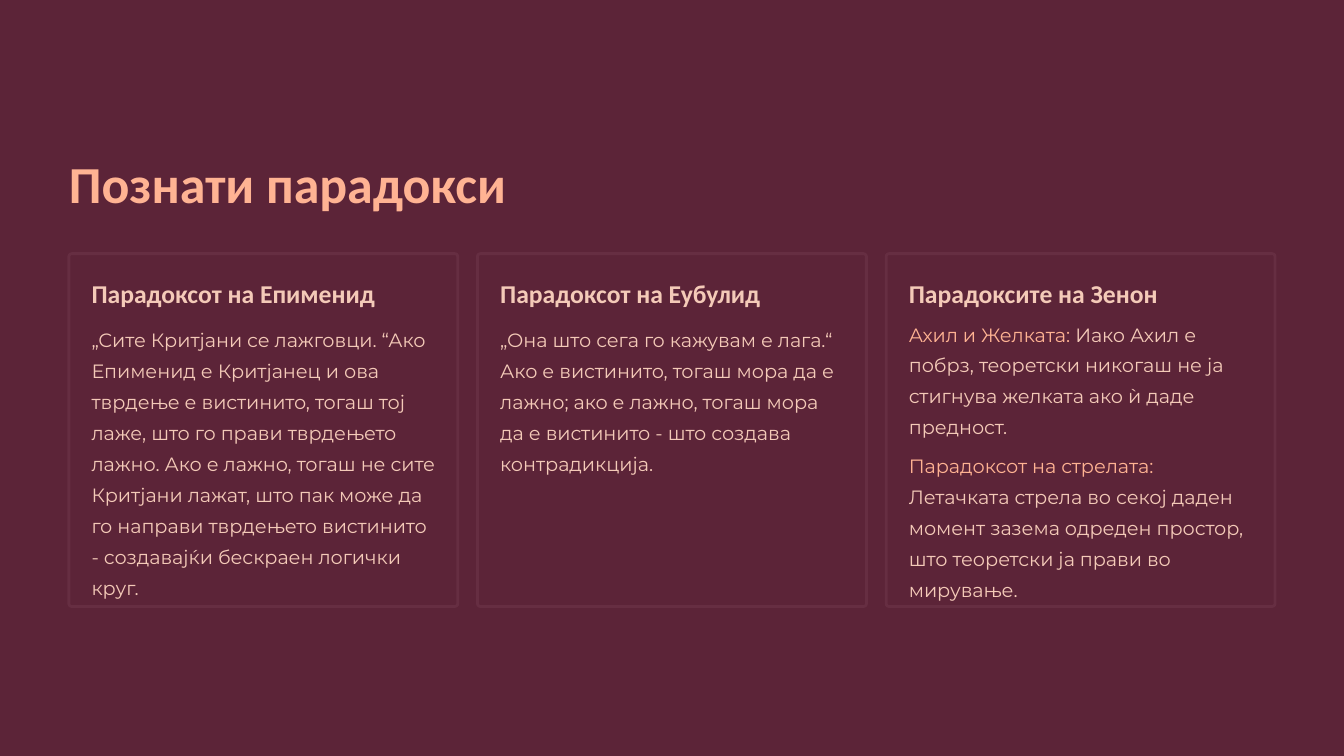
"""Build a slide with three cards about well-known paradoxes."""
from pptx import Presentation
from pptx.dml.color import RGBColor
from pptx.enum.shapes import MSO_SHAPE as Shape
from pptx.enum.text import MSO_ANCHOR as Anchor, MSO_AUTO_SIZE as AutoSize, PP_ALIGN as Align
from pptx.util import Inches, Pt

TITLE = "Познати парадокси"
CARDS = [
    ("Парадоксот на Епименид", 3.82, [
        ("", "„Сите Критјани се лажговци. “Ако Епименид е Критјанец и ова тврдење е вистинито, "
             "тогаш тој лаже, што го прави тврдењето лажно. Ако е лажно, тогаш не сите Критјани "
             "лажат, што пак може да го направи тврдењето вистинито - создавајќи бескраен "
             "логички круг."),
    ]),
    ("Парадоксот на Еубулид", 3.82, [
        ("", "„Она што сега го кажувам е лага.“ Ако е вистинито, тогаш мора да е лажно; "
             "ако е лажно, тогаш мора да е вистинито - што создава контрадикција."),
    ]),
    ("Парадоксите на Зенон", 3.75, [
        ("Ахил и Желката: ", "Иако Ахил е побрз, теоретски никогаш не ја стигнува желката "
                             "ако ѝ даде предност."),
        ("Парадоксот на стрелата: ", "Летачката стрела во секој даден момент зазема одреден "
                                     "простор, што теоретски ја прави во мирување."),
    ]),
]
COLORS = {"ground": "5C2438", "edge": "662E42", "accent": "FFB393", "text": "F4CAB8"}
HEADING_FONT, BODY_FONT = "Calibri", "Montserrat"
WIDTH, HEIGHT = 16, 9
MARGIN, GAP = 0.82, 0.235
CARD_TOP, CARD_HEIGHT, PADDING = 3.02, 4.2, 0.27
CARD_WIDTH = (WIDTH - 2 * MARGIN - (len(CARDS) - 1) * GAP) / len(CARDS)
NOTE_HEIGHT, NOTE_PITCH = 1.5, 1.57


def color(name):
    return RGBColor.from_string(COLORS[name])


def write(holder, runs, font, size, leading, bold=False, wrap=False):
    frame = holder.text_frame
    frame.margin_left = frame.margin_right = frame.margin_top = frame.margin_bottom = 0
    frame.auto_size = AutoSize.NONE
    frame.word_wrap = wrap
    frame.vertical_anchor = Anchor.TOP
    paragraph = frame.paragraphs[0]
    paragraph.alignment = Align.LEFT
    paragraph.line_spacing = Pt(leading)
    for words, tint in runs:
        if words:
            run = paragraph.add_run()
            run.text = words
            run.font.name, run.font.size, run.font.bold = font, Pt(size), bold
            run.font.color.rgb = color(tint)


def add_card(slide, column, heading, notes_top, notes):
    left = MARGIN + column * (CARD_WIDTH + GAP)
    card = slide.shapes.add_shape(Shape.ROUNDED_RECTANGLE, Inches(left), Inches(CARD_TOP),
                                  Inches(CARD_WIDTH), Inches(CARD_HEIGHT))
    card.adjustments[0] = 0.008
    card.shadow.inherit = False
    card.fill.solid()
    card.fill.fore_color.rgb = color("ground")
    card.line.color.rgb = color("edge")
    card.line.width = Pt(2.4)

    inner_left = Inches(left + PADDING)
    label = slide.shapes.add_textbox(inner_left, Inches(CARD_TOP + PADDING),
                                     Inches(3.12), Inches(0.39))
    write(label, [(heading, "text")], HEADING_FONT, 22, 28, bold=True)
    for row, (lead, body) in enumerate(notes):
        note = slide.shapes.add_textbox(inner_left, Inches(notes_top + row * NOTE_PITCH),
                                        Inches(CARD_WIDTH - 2 * PADDING), Inches(NOTE_HEIGHT))
        write(note, [(lead, "accent"), (body, "text")], BODY_FONT, 16.5, 26.5, wrap=True)


def main():
    deck = Presentation()
    deck.slide_width, deck.slide_height = Inches(WIDTH), Inches(HEIGHT)
    slide = deck.slides.add_slide(deck.slide_layouts.get_by_name("Title Only"))
    slide.background.fill.solid()
    slide.background.fill.fore_color.rgb = color("ground")

    title = slide.shapes.title
    title.left, title.top = Inches(MARGIN), Inches(1.77)
    title.width, title.height = Inches(6.24), Inches(0.78)
    write(title, [(TITLE, "accent")], HEADING_FONT, 44.5, 56, bold=True)

    for column, (heading, notes_top, notes) in enumerate(CARDS):
        add_card(slide, column, heading, notes_top, notes)
    deck.save("out.pptx")


if __name__ == "__main__":
    main()
